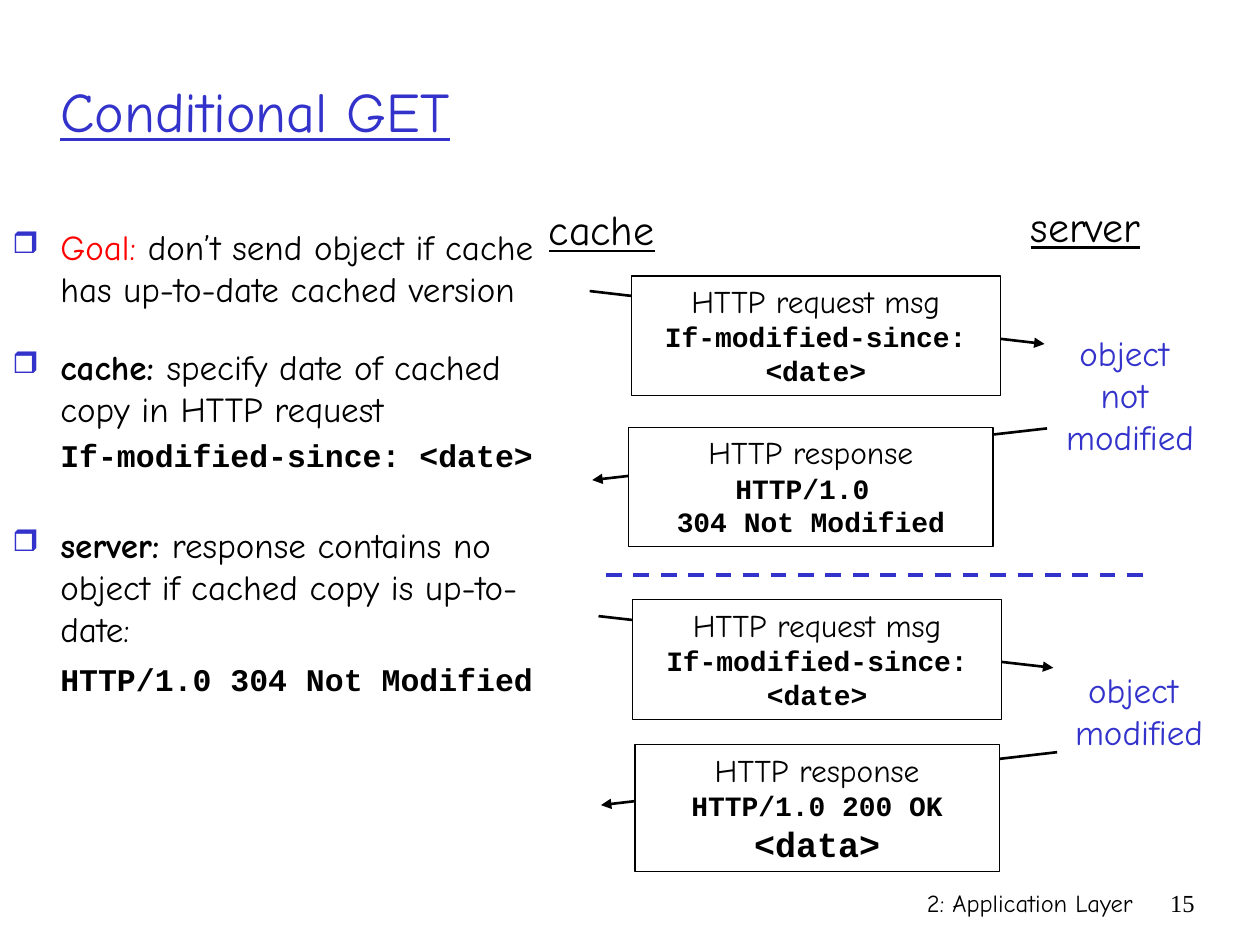
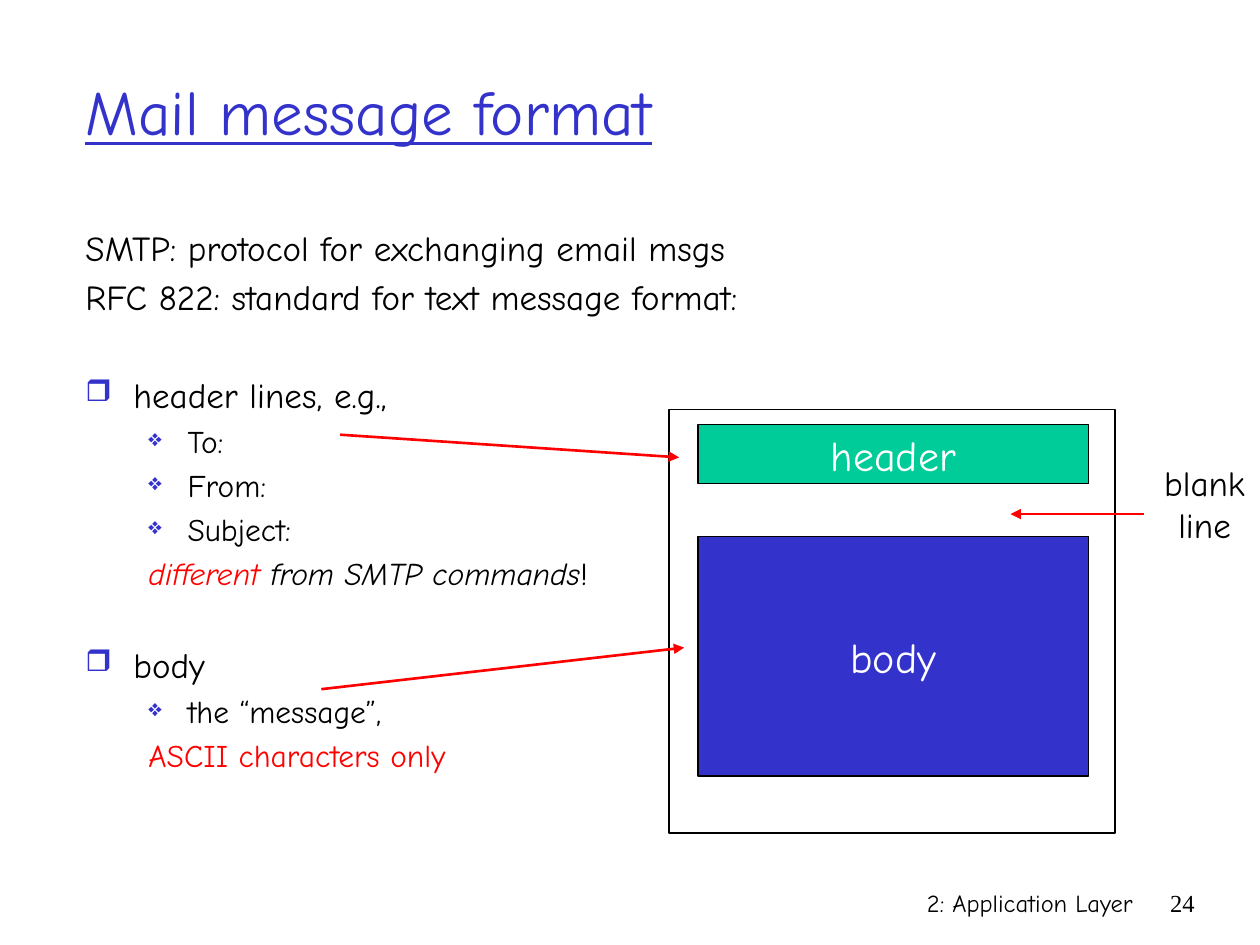
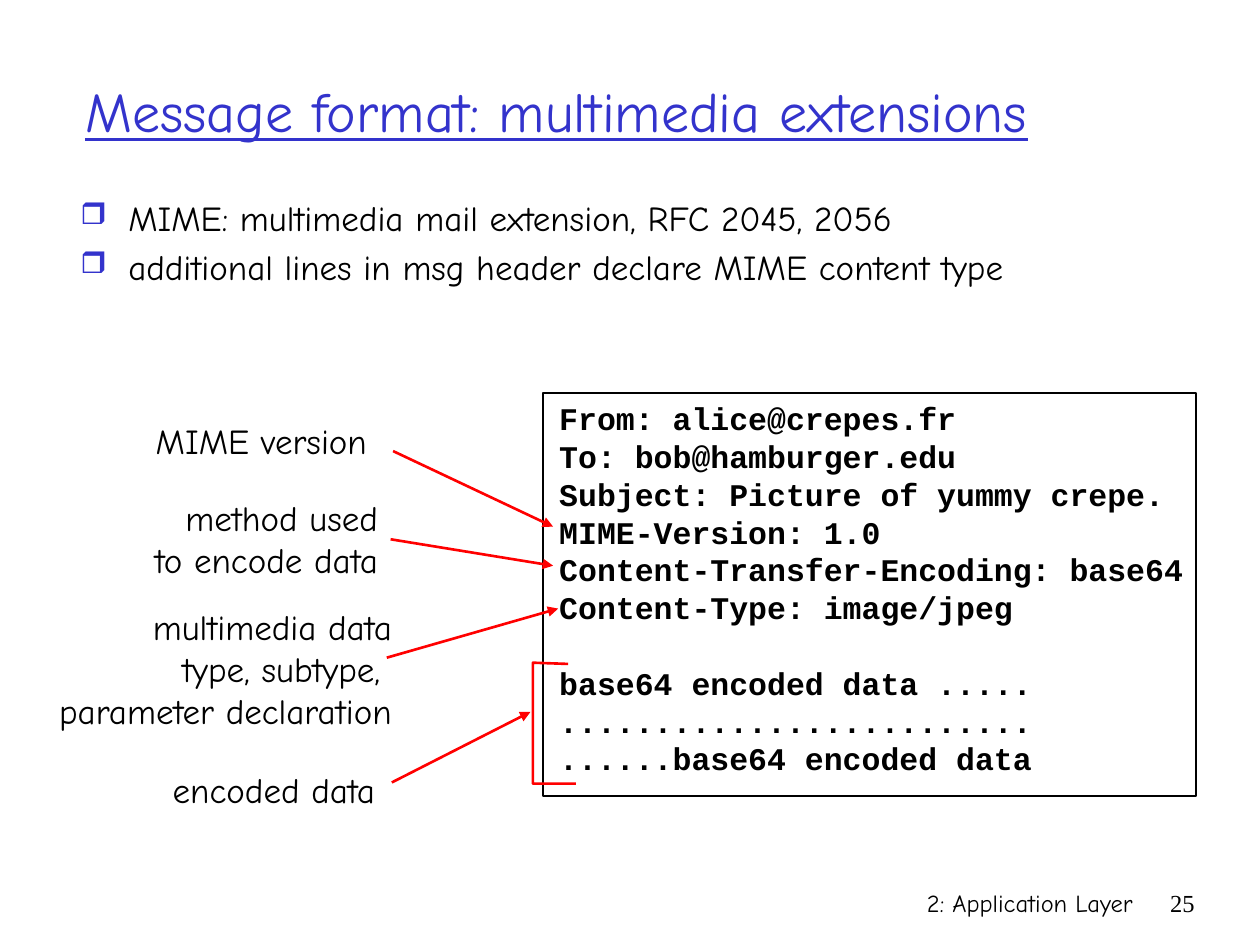
from lxml import etree
from pptx import Presentation
from pptx.dml.color import RGBColor
from pptx.enum.dml import MSO_LINE
from pptx.enum.shapes import MSO_CONNECTOR, MSO_SHAPE
from pptx.enum.text import MSO_ANCHOR, MSO_AUTO_SIZE, PP_ALIGN
from pptx.oxml.ns import qn
from pptx.util import Inches, Pt

SLIDE_W, SLIDE_H = Inches(10), Inches(7.5)
COLUMNS, ROWS = 10, 7.5
BLANK_LAYOUT = 6

LEFT, CENTER, RIGHT = PP_ALIGN.LEFT, PP_ALIGN.CENTER, PP_ALIGN.RIGHT
TOP, MIDDLE = MSO_ANCHOR.TOP, MSO_ANCHOR.MIDDLE
GROW = MSO_AUTO_SIZE.SHAPE_TO_FIT_TEXT
RECTANGLE = MSO_SHAPE.RECTANGLE
STRAIGHT = MSO_CONNECTOR.STRAIGHT
DASH = MSO_LINE.DASH

BLACK, WHITE, BLUE, RED, GREEN = "000000", "FFFFFF", "3333CC", "FF0000", "00CC99"
HAND, CODE, SERIF = "Comic Neue", "Courier New", "Times New Roman"

MAIN_BULLET, SUB_BULLET = ("❒", 85), ("❖", 75)
MAIN_INDENT, SUB_INDENT = (0.38, -0.38), (0.81, -0.31)
SUB_NOTE_INDENT = (0.5, 0)


def color(hex_string):
    return RGBColor.from_string(hex_string)


def col(n):
    return round(SLIDE_W * n / COLUMNS)


def row(n):
    return round(SLIDE_H * n / ROWS)


def place(left, top, width, height):
    return col(left), row(top), col(width), row(height)


def run(text, size=20, font=HAND, ink=BLACK, **marks):
    return text, size, font, ink, marks


def code(text, size=18):
    return run(text, size, CODE, bold=True)


def add_runs(paragraph, runs):
    for text, size, font, ink, marks in runs:
        piece = paragraph.add_run()
        piece.text = text
        piece.font.size = Pt(size)
        piece.font.name = font
        piece.font.color.rgb = color(ink)
        for mark, value in marks.items():
            setattr(piece.font, mark, value)


def next_paragraph(frame, number):
    return frame.add_paragraph() if number else frame.paragraphs[0]


def write_lines(frame, lines, align=LEFT, anchor=TOP, wrap=True):
    frame.word_wrap = wrap
    frame.vertical_anchor = anchor
    for number, line in enumerate(lines):
        paragraph = next_paragraph(frame, number)
        paragraph.alignment = align
        add_runs(paragraph, [line])


def add_text(slide, area, lines, align=LEFT, anchor=TOP):
    frame = slide.shapes.add_textbox(*place(*area)).text_frame
    write_lines(frame, lines, align, anchor)
    return frame


def add_label(slide, area, lines, align=CENTER):
    frame = slide.shapes.add_textbox(*place(*area)).text_frame
    write_lines(frame, lines, align, wrap=False)
    frame.auto_size = GROW


def add_box(slide, area, fill=None, weight=0.75, lines=(), anchor=TOP):
    box = slide.shapes.add_shape(RECTANGLE, *place(*area))
    box.shadow.inherit = False
    if fill:
        box.fill.solid()
        box.fill.fore_color.rgb = color(fill)
    else:
        box.fill.background()
    box.line.color.rgb = color(BLACK)
    box.line.width = Pt(weight)
    write_lines(box.text_frame, lines, CENTER, anchor)


def add_line(slide, start, end, ink, weight=1.5):
    line = slide.shapes.add_connector(
        STRAIGHT, col(start[0]), row(start[1]), col(end[0]), row(end[1]))
    line.line.color.rgb = color(ink)
    line.line.width = Pt(weight)
    etree.SubElement(line._element.spPr, qn("a:effectLst"))
    return line


def add_arrow(slide, start, end, ink=RED):
    line = add_line(slide, start, end, ink).line
    etree.SubElement(line._get_or_add_ln(), qn("a:tailEnd"), type="triangle")


def set_indent(paragraph, indent, bullet):
    properties = paragraph._p.get_or_add_pPr()
    margin, first = indent
    properties.set("marL", str(Inches(margin)))
    properties.set("indent", str(Inches(first)))
    if bullet:
        symbol, percent = bullet
        tint = etree.SubElement(properties, qn("a:buClr"))
        etree.SubElement(tint, qn("a:srgbClr"), val=BLUE)
        etree.SubElement(properties, qn("a:buSzPct"), val=str(percent * 1000))
        etree.SubElement(properties, qn("a:buChar"), char=symbol)


def item(*runs, before=4, indent=MAIN_INDENT, bullet=MAIN_BULLET):
    return runs, before, indent, bullet


def sub_item(text):
    return item(run(text, 18), before=3.6, indent=SUB_INDENT, bullet=SUB_BULLET)


def note(*runs, before=3.6, indent=(0, 0)):
    return item(*runs, before=before, indent=indent, bullet=None)


def add_body(slide, area, items):
    frame = slide.shapes.add_textbox(*place(*area)).text_frame
    frame.word_wrap = True
    for number, (runs, before, indent, bullet) in enumerate(items):
        paragraph = next_paragraph(frame, number)
        paragraph.space_before = Pt(before)
        set_indent(paragraph, indent, bullet)
        add_runs(paragraph, runs)


def start_slide(deck, number, title, left=0.58, size=32):
    slide = deck.slides.add_slide(deck.slide_layouts[BLANK_LAYOUT])
    add_text(slide, (5.92, 7, 3.17, 0.5), [run("2: Application Layer", 14)], RIGHT)
    add_text(slide, (9.08, 7, 0.5, 0.5), [run(str(number), 14, SERIF)], RIGHT)
    add_text(slide, (left, 0.25, 9.17, 1.25),
             [run(title, size, ink=BLUE, underline=True)], anchor=MIDDLE)
    return slide


def add_message(slide, start, end, area, heading, details):
    add_arrow(slide, start, end, BLACK)
    add_box(slide, area, WHITE, lines=[run(heading, 18), *details])


def build_conditional_get(deck):
    slide = start_slide(deck, 15, "Conditional GET", left=0.38)
    hanging = (MAIN_INDENT[0], 0)
    add_body(slide, (0, 1.74, 4.41, 4.71), [
        item(run("Goal:", ink=RED),
             run(" don’t send object if cache has up-to-date cached version")),
        item(run("cache: ", bold=True),
             run("specify date of cached copy in HTTP request"), before=20.8),
        note(code("If-modified-since: <date>"), indent=hanging),
        item(run("server: ", bold=True),
             run("response contains no object if cached copy is up-to-date:"),
             before=28),
        note(code("HTTP/1.0 304 Not Modified"), before=6, indent=hanging),
    ])
    for name, area in (("cache", (4.23, 1.57, 1.09, 0.5)),
                       ("server", (8.01, 1.54, 1.21, 0.5))):
        add_label(slide, area, [run(name, 24, underline=True)])

    request = "HTTP request msg", [code("If-modified-since: <date>", 16)]
    not_modified = [code("HTTP/1.0 ", 16), code("304 Not Modified", 16)]
    modified = [code("HTTP/1.0 200 OK", 16), code("<data>", 20)]
    add_message(slide, (4.68, 2.31), (8.29, 2.73), (5.01, 2.19, 2.93, 0.95), *request)
    add_message(slide, (8.31, 3.4), (4.7, 3.81), (4.99, 3.39, 2.89, 0.95),
                "HTTP response", not_modified)
    add_line(slide, (4.81, 4.56), (9.08, 4.56), BLUE, 2.25).line.dash_style = DASH
    add_message(slide, (4.75, 4.89), (8.36, 5.3), (5.02, 4.76, 2.93, 0.95), *request)
    add_message(slide, (8.39, 5.97), (4.77, 6.39), (5.04, 5.91, 2.89, 1.01),
                "HTTP response", modified)

    for area, words in (((8.3, 2.58, 1.34, 1.1), ("object ", "not ", "modified")),
                        ((8.37, 5.26, 1.34, 0.77), ("object ", "modified"))):
        add_label(slide, area, [run(word, ink=BLUE) for word in words])


def build_mail_format(deck):
    slide = start_slide(deck, 24, "Mail message format", size=36)
    add_body(slide, (0.58, 1.75, 8.01, 5.08), [
        note(run("SMTP: protocol for exchanging email msgs"), before=4),
        note(run("RFC 822: standard for text message format:"), before=4),
        item(run("header lines, e.g.,"), before=32),
        *[sub_item(field) for field in ("To:", "From:", "Subject:")],
        note(run("different ", 18, ink=RED, italic=True),
             run("from SMTP commands", 18, italic=True),
             run("!", 18), indent=SUB_NOTE_INDENT),
        item(run("body"), before=29.2),
        sub_item("the “message”,"),
        note(run("ASCII characters only", 18, ink=RED), indent=SUB_NOTE_INDENT),
    ])
    for name, top, height, fill in (("header", 3.37, 0.47, GREEN),
                                    ("body", 4.26, 1.9, BLUE)):
        add_box(slide, (5.54, top, 3.1, height), fill,
                lines=[run(name, 24, ink=WHITE)], anchor=MIDDLE)
    add_box(slide, (5.31, 3.25, 3.54, 3.36), weight=1)
    add_label(slide, (9.12, 3.61, 0.88, 0.77), [run("blank"), run("line")])
    for start, end in (((2.7, 3.45), (5.39, 3.63)),
                       ((2.55, 5.47), (5.43, 5.14)),
                       ((9.08, 4.08), (8.02, 4.08))):
        add_arrow(slide, start, end)


def add_bracket(slide, points):
    corners = [(col(x), row(y)) for x, y in points]
    builder = slide.shapes.build_freeform(*corners[0])
    builder.add_line_segments(corners[1:], close=False)
    bracket = builder.convert_to_shape()
    bracket.shadow.inherit = False
    bracket.fill.background()
    bracket.line.color.rgb = color(RED)
    bracket.line.width = Pt(1.5)


def build_multimedia(deck):
    slide = start_slide(deck, 25, "Message format: multimedia extensions")
    add_body(slide, (0.54, 1.51, 8.5, 5.08), [
        item(run("MIME: multimedia mail extension, RFC 2045, 2056")),
        item(run("additional lines in msg header declare MIME content type")),
    ])
    header_lines = (
        "From: alice@crepes.fr",
        "To: bob@hamburger.edu",
        "Subject: Picture of yummy crepe.",
        "MIME-Version: 1.0",
        "Content-Transfer-Encoding: base64",
        "Content-Type: image/jpeg",
    )
    data_lines = (
        "base64 encoded data .....",
        ".........................",
        "......base64 encoded data",
    )
    message = add_text(slide, (4.34, 3.12, 5.44, 3.4),
                       [code(line) for line in header_lines + data_lines])
    message.paragraphs[len(header_lines)].space_before = Pt(21.6)
    add_box(slide, (4.31, 3.12, 5.18, 3.2), weight=1)

    callouts = (
        ((1.06, 3.28, 2.03, 0.43), CENTER, ("MIME version",),
         (3.12, 3.58), (4.39, 4.18)),
        ((0.98, 3.89, 2.12, 0.77), RIGHT, ("method used", "to encode data"),
         (3.1, 4.28), (4.39, 4.49)),
        ((0.12, 4.76, 3.09, 1.1), RIGHT,
         ("multimedia data", "type, subtype, ", "parameter declaration"),
         (3.07, 5.22), (4.43, 4.83)),
        ((1.21, 6.05, 1.93, 0.43), CENTER, ("encoded data",),
         (3.11, 6.21), (4.21, 5.65)),
    )
    for area, align, lines, start, end in callouts:
        add_label(slide, area, [run(line) for line in lines], align)
        add_arrow(slide, start, end)
    add_bracket(slide, [(4.51, 5.27), (4.23, 5.26), (4.23, 6.22), (4.57, 6.22)])


def main():
    deck = Presentation()
    deck.slide_width, deck.slide_height = SLIDE_W, SLIDE_H
    build_conditional_get(deck)
    build_mail_format(deck)
    build_multimedia(deck)
    deck.save("out.pptx")


if __name__ == "__main__":
    main()
